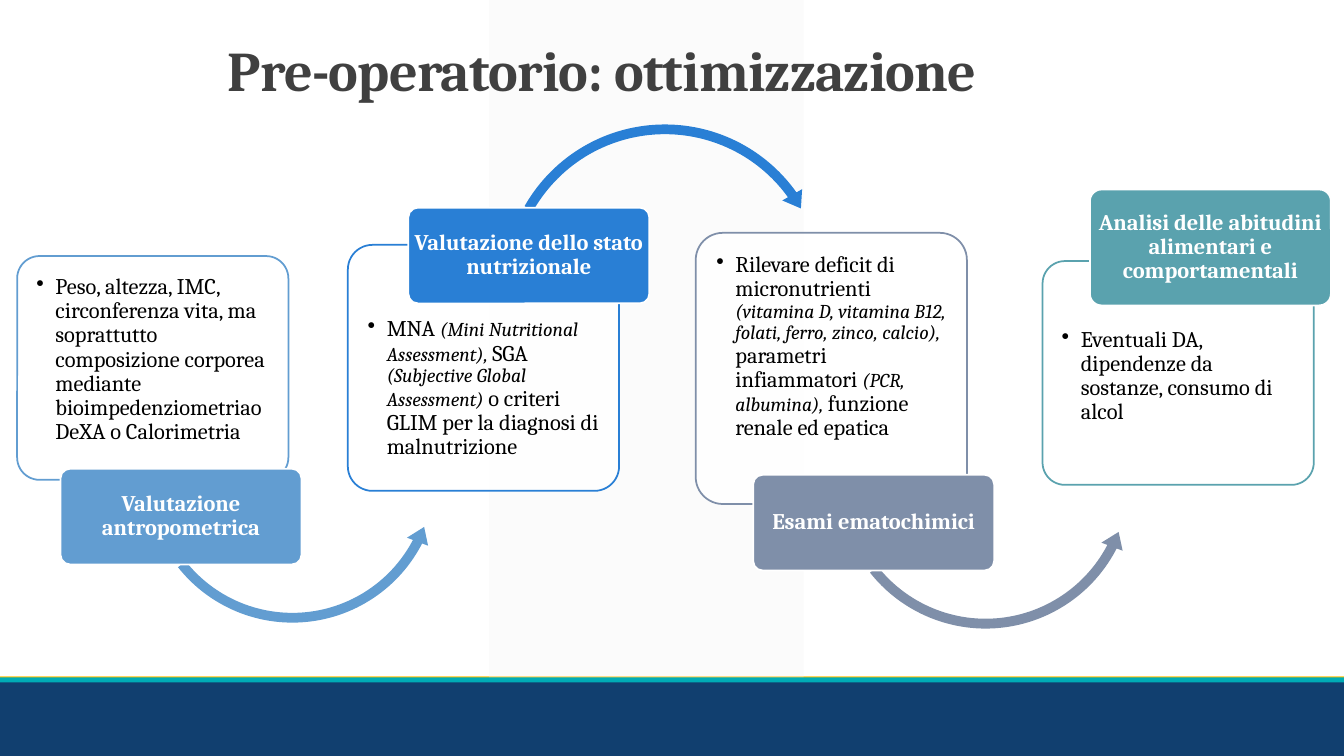
from dataclasses import dataclass
from typing import Optional

from lxml import etree
from pptx import Presentation
from pptx import util as u
from pptx.dml.color import RGBColor
from pptx.enum import shapes, text
from pptx.oxml.ns import qn

COLUMNS, ROWS = 133.3, 75
CELL = u.Inches(0.1)
FONT = "Cambria"
BODY_WIDTH, LABEL_WIDTH = 26.9, 23.9
SIDE_MARGIN = 1.25
LABEL_MARGIN = 0.2
CORNER = 0.1

WHITE = RGBColor(0xFF, 0xFF, 0xFF)
BLACK = RGBColor(0x00, 0x00, 0x00)
CHARCOAL = RGBColor(0x40, 0x40, 0x40)
PALE = RGBColor(0xF2, 0xF2, 0xF2)
GOLD = RGBColor(0xFF, 0xC0, 0x00)
TURQUOISE = RGBColor(0x00, 0xAC, 0xB6)
NAVY = RGBColor(0x11, 0x3F, 0x6F)
SKY = RGBColor(0x62, 0x9D, 0xD1)
BLUE = RGBColor(0x29, 0x7F, 0xD5)
SLATE = RGBColor(0x7F, 0x8F, 0xA9)
TEAL = RGBColor(0x5A, 0xA2, 0xAE)

KIND = shapes.MSO_SHAPE


@dataclass(frozen=True)
class Box:
    col: float
    row: float
    cols: float
    rows: float

    def emu(self) -> list[int]:
        return [round(n * CELL) for n in (self.col, self.row, self.cols, self.rows)]


@dataclass(frozen=True)
class Band:
    box: Box
    color: RGBColor
    opacity: int = 100


@dataclass(frozen=True)
class Arrow:
    kind: KIND
    col: float
    row: float
    size: float
    bends: tuple[float, ...]


@dataclass(frozen=True)
class Card:
    color: RGBColor
    body: Box
    text_top: float
    phrases: tuple[str, ...]
    label: Box
    heading: str
    arrow: Optional[Arrow] = None


BANDS = (
    Band(Box(0, 67.1, COLUMNS, 0.5), GOLD),
    Band(Box(0, 67.5, COLUMNS, 7.5), NAVY),
    Band(Box(48.5, 0, 31.2, 67.5), PALE, 30),
    Band(Box(0, 67.2, COLUMNS, 0.5), TURQUOISE),
)

CARDS = (
    Card(SKY, Box(1.7, 25.4, BODY_WIDTH, 22.2), SIDE_MARGIN,
         ("Peso, altezza, IMC, circonferenza vita, ma soprattutto composizione "
          "corporea mediante bioimpedenziometriao DeXA o Calorimetria",),
         Box(6, 46.5, LABEL_WIDTH, 9.5), "Valutazione antropometrica",
         Arrow(KIND.LEFT_CIRCULAR_ARROW, 13.9, 32.2, 30.2,
               (0.032, 3.943, 16.454, 85.001, 0.037))),
    Card(BLUE, Box(34.5, 24.3, BODY_WIDTH, 24.4), 6.5,
         ("MNA ", "(Mini Nutritional Assessment), ", "SGA ",
          "(Subjective Global Assessment) ",
          "o criteri GLIM per la diagnosi di malnutrizione"),
         Box(40.5, 20.6, LABEL_WIDTH, 9.5), "Valutazione dello stato nutrizionale",
         Arrow(KIND.CIRCULAR_ARROW, 49.3, 11.7, 33.3,
               (0.029, 3.55, 194.683, 125.744, 0.034))),
    Card(SLATE, Box(69, 23.1, BODY_WIDTH, 26.9), SIDE_MARGIN,
         ("Rilevare deficit di micronutrienti ",
          "(vitamina D, vitamina B12, folati, ferro, zinco, calcio), ",
          "parametri infiammatori ", "(PCR, albumina), ",
          "funzione renale ed epatica"),
         Box(74.7, 47.1, LABEL_WIDTH, 9.5), "Esami ematochimici",
         Arrow(KIND.LEFT_CIRCULAR_ARROW, 82.5, 32.5, 30.5,
               (0.032, 3.905, 16.409, 84.994, 0.037))),
    Card(TEAL, Box(103.4, 25.9, BODY_WIDTH, 22.2), 6,
         ("Eventuali DA, dipendenze da sostanze, consumo di alcol",),
         Box(108.1, 18.8, LABEL_WIDTH, 11.5),
         "Analisi delle abitudini alimentari e comportamentali"),
)


def add_block(slide, kind: KIND, box: Box, fill: RGBColor, opacity: int = 100,
              outline: Optional[RGBColor] = None, bends: tuple[float, ...] = ()):
    sp = slide.shapes.add_shape(kind, *box.emu())
    sp.shadow.inherit = False
    sp.fill.solid()
    sp.fill.fore_color.rgb = fill
    if opacity < 100:
        color = sp._element.spPr.find(qn("a:solidFill"))[0]
        etree.SubElement(color, qn("a:alpha"), val=str(opacity * 1000))
    if outline is None:
        sp.line.fill.background()
    else:
        sp.line.color.rgb = outline
        sp.line.width = u.Pt(1.25)
    for i, bend in enumerate(bends):
        sp.adjustments[i] = bend
    return sp


def format_run(r, size: float, color: RGBColor, bold: bool = False,
               italic: bool = False) -> None:
    r.font.name = FONT
    r.font.size = u.Pt(size)
    r.font.color.rgb = color
    r.font.bold = bold
    r.font.italic = italic


def set_margins(tf, side: float, top: float) -> None:
    tf.word_wrap = True
    tf.margin_left = tf.margin_right = round(side * CELL)
    tf.margin_top = round(top * CELL)
    tf.margin_bottom = round(LABEL_MARGIN * CELL)


def add_body(slide, card: Card) -> None:
    sp = add_block(slide, KIND.ROUNDED_RECTANGLE, card.body, WHITE, 90,
                   card.color, (CORNER,))
    tf = sp.text_frame
    set_margins(tf, SIDE_MARGIN, card.text_top)
    tf.vertical_anchor = text.MSO_ANCHOR.TOP
    p = tf.paragraphs[0]
    pPr = p._p.get_or_add_pPr()
    indent = round(1.9 * CELL)
    pPr.set("marL", str(indent))
    pPr.set("indent", str(-indent))
    etree.SubElement(pPr, qn("a:buChar"), char="•")
    p.alignment = text.PP_ALIGN.LEFT
    p.line_spacing = 0.9
    for i, phrase in enumerate(card.phrases):
        r = p.add_run()
        r.text = phrase
        aside = i % 2 == 1
        format_run(r, 14 if aside else 16, BLACK, italic=aside)


def add_label(slide, card: Card) -> None:
    sp = add_block(slide, KIND.ROUNDED_RECTANGLE, card.label, card.color,
                   outline=WHITE, bends=(CORNER,))
    tf = sp.text_frame
    set_margins(tf, LABEL_MARGIN, LABEL_MARGIN)
    tf.vertical_anchor = text.MSO_ANCHOR.MIDDLE
    tf.text = card.heading
    p = tf.paragraphs[0]
    p.alignment = text.PP_ALIGN.CENTER
    p.line_spacing = 0.9
    format_run(p.runs[0], 16, WHITE, bold=True)


def add_card(slide, card: Card) -> None:
    add_body(slide, card)
    if card.arrow:
        a = card.arrow
        add_block(slide, a.kind, Box(a.col, a.row, a.size, a.size), card.color,
                  bends=a.bends)
    add_label(slide, card)


def format_title(slide) -> None:
    sp = slide.shapes.title
    sp.left, sp.top, sp.width, sp.height = Box(21.6, 3.9, 90.1, 6.7).emu()
    tf = sp.text_frame
    tf.text = "Pre-operatorio: ottimizzazione"
    tf.auto_size = text.MSO_AUTO_SIZE.NONE
    tf.vertical_anchor = text.MSO_ANCHOR.MIDDLE
    p = tf.paragraphs[0]
    p.alignment = text.PP_ALIGN.LEFT
    p.line_spacing = 0.9
    r = p.runs[0]
    format_run(r, 40, CHARCOAL, bold=True)
    r._r.get_or_add_rPr().set("spc", "-50")
    slide.shapes._spTree.append(sp._element)


def main() -> None:
    prs = Presentation()
    prs.slide_width = round(COLUMNS * CELL)
    prs.slide_height = ROWS * CELL
    slide = prs.slides.add_slide(prs.slide_layouts[5])
    for band in BANDS:
        add_block(slide, KIND.RECTANGLE, band.box, band.color, band.opacity)
    for card in CARDS:
        add_card(slide, card)
    format_title(slide)
    prs.save("out.pptx")


if __name__ == "__main__":
    main()
